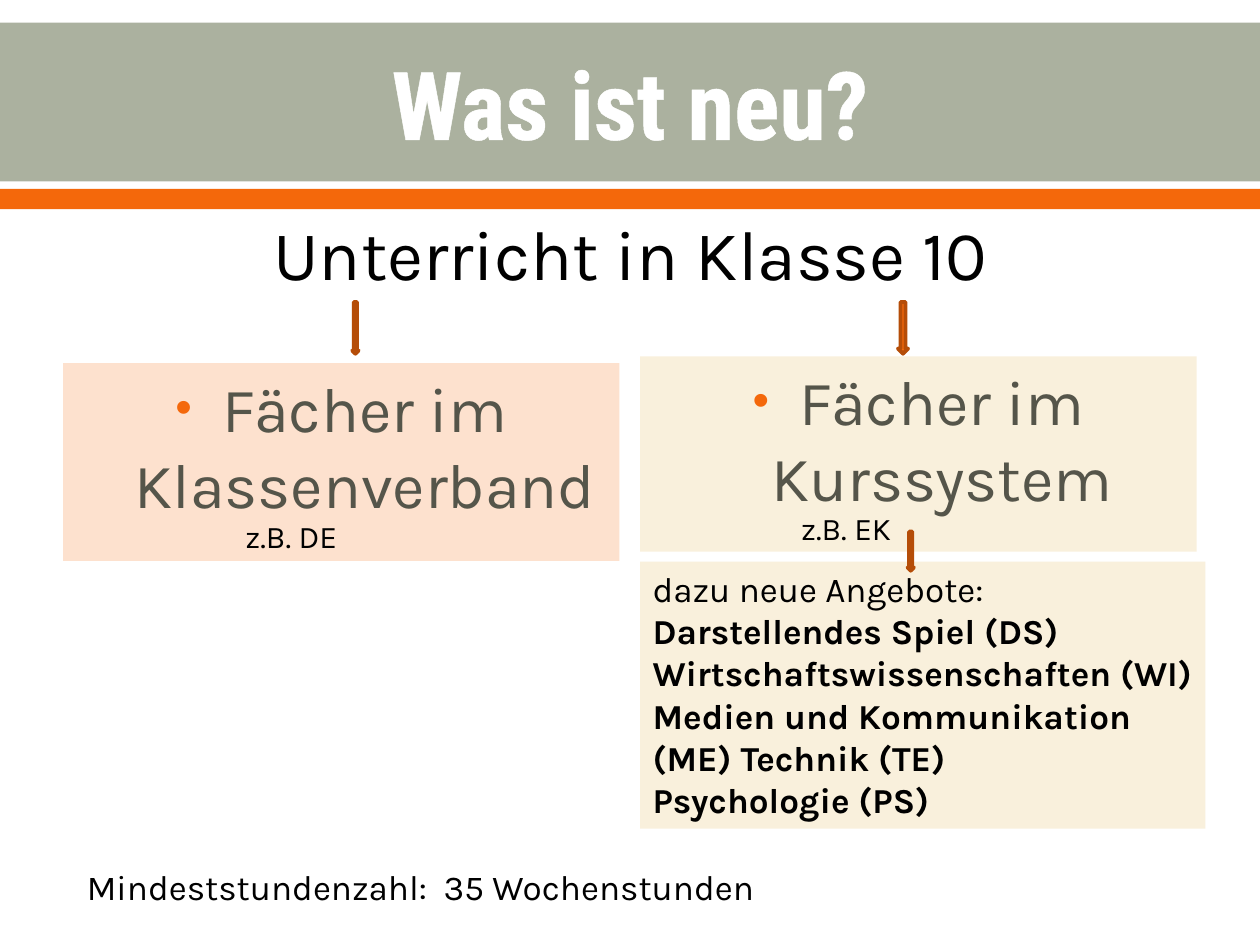
from lxml import etree
from pptx import Presentation
from pptx.dml.color import RGBColor
from pptx.enum.shapes import MSO_SHAPE as Shape
from pptx.enum.text import MSO_ANCHOR as Anchor, MSO_AUTO_SIZE as AutoSize, PP_ALIGN as Align
from pptx.oxml import parse_xml
from pptx.oxml.ns import nsdecls, qn
from pptx.util import Pt


def paint(color_format, color):
    color_format.solid()
    color_format.fore_color.rgb = RGBColor.from_string(color)


def write(shape, text, size, color="000000", font="Karla", align=Align.LEFT):
    frame = shape.text_frame
    frame.text = text
    frame.word_wrap = True
    frame.auto_size = AutoSize.NONE
    for paragraph in frame.paragraphs:
        paragraph.alignment = align
        for run in paragraph.runs:
            run.font.size = Pt(size)
            run.font.name = font
            paint(run.font.fill, color)
    return frame


presentation = Presentation()
presentation.slide_width, presentation.slide_height = Pt(720), Pt(540)
slide = presentation.slides.add_slide(presentation.slide_layouts[3])
title, class_box, course_box = slide.placeholders

for top, height, color in [(13, 90.7, "ABB19F"), (108, 11.5, "F4680B")]:
    bar = slide.shapes.add_shape(Shape.RECTANGLE, Pt(0), Pt(top), Pt(720), Pt(height))
    bar.shadow.inherit = False
    paint(bar.fill, color)
    bar.line.fill.background()
    title.element.addprevious(bar.element)

title.left, title.top, title.width, title.height = Pt(36), Pt(14.4), Pt(648), Pt(87.8)
title_frame = write(title, "Was ist neu?", 54, "FFFFFF", "Roboto Condensed", Align.CENTER)
title_frame.vertical_anchor = Anchor.MIDDLE
title_font = title_frame.paragraphs[0].runs[0].font
title_font.bold = True
title_font.fill.fore_color.rgb = RGBColor.from_string("FFFFFF")
outline = parse_xml(
    f'<a:ln {nsdecls("a")} w="13970"><a:solidFill><a:srgbClr val="FFFFFF"/></a:solidFill></a:ln>'
)
title_frame.paragraphs[0].runs[0].font.fill
title_frame.paragraphs[0].runs[0]._r.get_or_add_rPr().insert(0, outline)

for box, text, left, top, height, color in [
    (class_box, "Fächer im Klassenverband", 36, 207.5, 113, "FDE1CE"),
    (course_box, "Fächer im Kurssystem", 365.8, 203.7, 111.5, "F9F0DC"),
]:
    box.left, box.top, box.width, box.height = Pt(left), Pt(top), Pt(318), Pt(height)
    paint(box.fill, color)
    paragraph = write(box, text, 36, "55554A", align=Align.CENTER).paragraphs[0]
    properties = paragraph._p.get_or_add_pPr()
    properties.set("marL", str(Pt(27)))
    properties.set("indent", str(-Pt(27)))
    bullet_color = etree.SubElement(properties, qn("a:buClr"))
    etree.SubElement(bullet_color, qn("a:srgbClr"), val="F4680B")
    etree.SubElement(properties, qn("a:buSzPct"), val="75000")
    etree.SubElement(properties, qn("a:buFont"), typeface="Arial")
    etree.SubElement(properties, qn("a:buChar"), char="•")

heading = slide.shapes.add_textbox(Pt(139), Pt(116.6), Pt(442), Pt(55.4))
write(heading, "Unterricht in Klasse 10", 40, align=Align.CENTER)

offers = [
    "dazu neue Angebote:",
    "Darstellendes Spiel (DS)",
    "Wirtschaftswissenschaften (WI)",
    "Medien und Kommunikation (ME) Technik (TE)",
    "Psychologie (PS)",
]
offer_box = slide.shapes.add_textbox(Pt(365.8), Pt(321), Pt(323), Pt(152.6))
paint(offer_box.fill, "F9F0DC")
for paragraph in write(offer_box, "\n".join(offers), 20).paragraphs[1:]:
    paragraph.runs[0].font.bold = True

for left, top, width, height in [
    (201.3, 172.6, 3.6, 29.5),
    (513.1, 172.6, 5.8, 29.5),
    (518.6, 303.8, 3.6, 22.3),
]:
    arrow = slide.shapes.add_shape(Shape.DOWN_ARROW, Pt(left), Pt(top), Pt(width), Pt(height))
    arrow.shadow.inherit = False
    paint(arrow.fill, "F4680B")
    paint(arrow.line.fill, "B54D08")
    arrow.line.width = Pt(2.22)

for text, left, top, width, height, size in [
    ("Mindeststundenzahl:  35 Wochenstunden", 42.5, 491, 397, 31.5, 20),
    ("z.B. EK", 450.7, 287.3, 108, 29, 18),
    ("z.B. DE", 133.2, 291.6, 108, 29, 18),
]:
    note = slide.shapes.add_textbox(Pt(left), Pt(top), Pt(width), Pt(height))
    write(note, text, size)

presentation.save("out.pptx")
